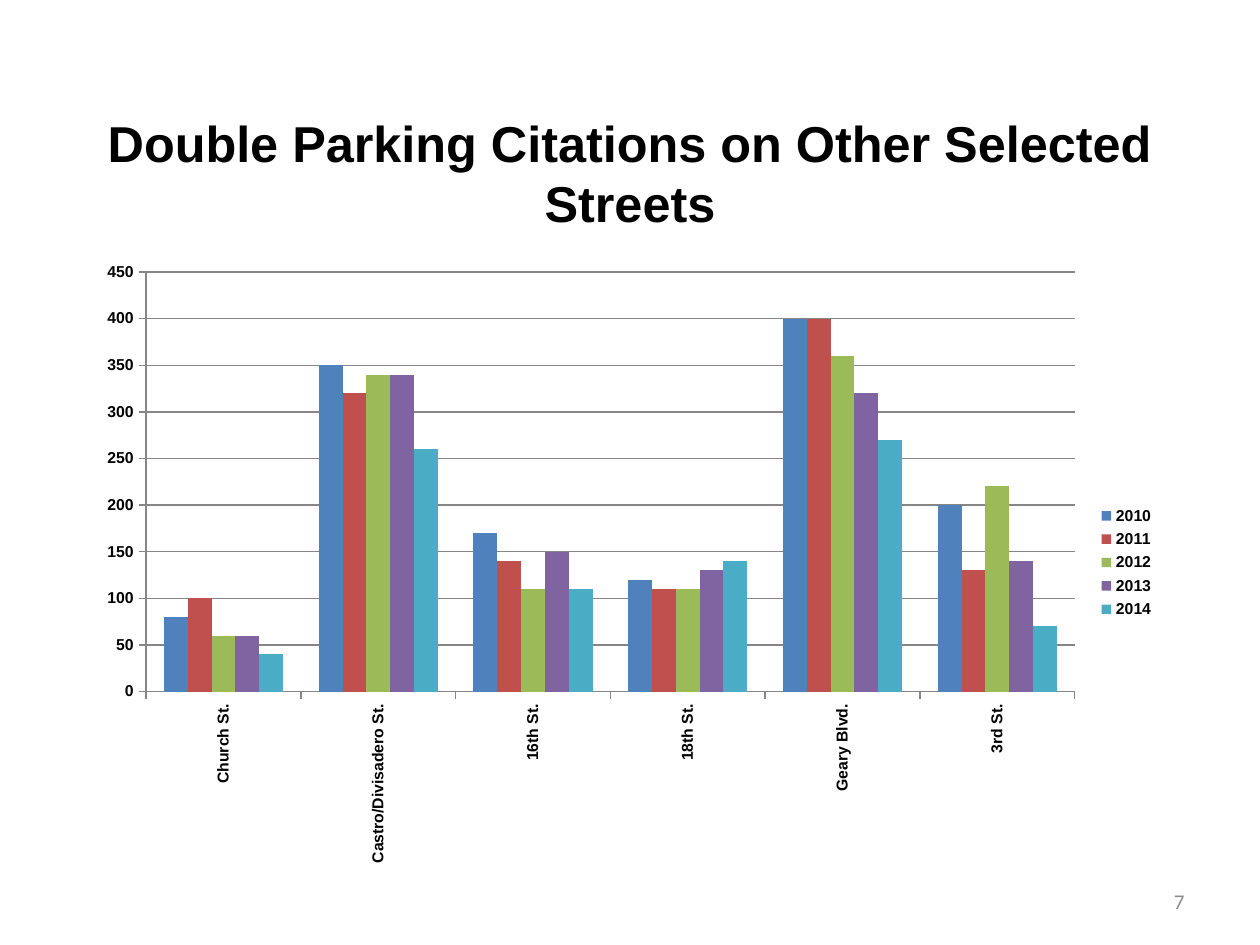
from typing import NamedTuple

from lxml import etree
from pptx import Presentation
from pptx.chart.data import CategoryChartData
from pptx.dml.color import RGBColor
from pptx.enum.chart import XL_CHART_TYPE, XL_LEGEND_POSITION, XL_TICK_MARK
from pptx.enum.text import MSO_ANCHOR, MSO_AUTO_SIZE, PP_ALIGN
from pptx.oxml.ns import qn
from pptx.util import Inches, Pt

CLUSTERED = XL_CHART_TYPE.COLUMN_CLUSTERED
LEGEND_RIGHT = XL_LEGEND_POSITION.RIGHT
OUTSIDE = XL_TICK_MARK.OUTSIDE
MIDDLE = MSO_ANCHOR.MIDDLE
NO_AUTOFIT = MSO_AUTO_SIZE.NONE
CENTER, RIGHT = PP_ALIGN.CENTER, PP_ALIGN.RIGHT
TITLE_ONLY = 5

COLORS = {
    "text": "000000",
    "page_number": "8C8C8C",
    "axis": "868686",
    "2010": "4F81BD",
    "2011": "C0504D",
    "2012": "9BBB59",
    "2013": "8064A2",
    "2014": "4BACC6",
}


class Box(NamedTuple):
    left: float
    top: float
    width: float
    height: float


class YearCitations(NamedTuple):
    year: str
    counts: tuple


TITLE_BOX = Box(0.5, 0.93, 9, 0.88)
NUMBER_BOX = Box(7.17, 6.95, 2.33, 0.4)
CHART_BOX = Box(0.68, 1.98, 8.58, 4.97)
PLOT_BOX = Box(1.16, 2.16, 7.37, 3.33)

STREETS = ("Church St.", "Castro/Divisadero St.", "16th St.", "18th St.",
           "Geary Blvd.", "3rd St.")
CITATIONS = (
    YearCitations("2010", (80, 350, 170, 120, 400, 200)),
    YearCitations("2011", (100, 320, 140, 110, 400, 130)),
    YearCitations("2012", (60, 340, 110, 110, 360, 220)),
    YearCitations("2013", (60, 340, 150, 130, 320, 140)),
    YearCitations("2014", (40, 260, 110, 140, 270, 70)),
)


def color(name: str) -> RGBColor:
    return RGBColor.from_string(COLORS[name])


def lengths(box: Box) -> list:
    return [Inches(value) for value in box]


def style_font(font, name: str, size: float, color_name: str, bold: bool) -> None:
    font.name = name
    font.size = Pt(size)
    font.bold = bold
    font.color.rgb = color(color_name)


def style_line(line) -> None:
    line.color.rgb = color("axis")
    line.width = Pt(0.75)


def write_line(shape, text: str, alignment, name: str, size: float,
               color_name: str, bold: bool) -> None:
    frame = shape.text_frame
    frame.text = text
    frame.word_wrap = True
    frame.auto_size = NO_AUTOFIT
    frame.vertical_anchor = MIDDLE
    paragraph = frame.paragraphs[0]
    paragraph.alignment = alignment
    style_font(paragraph.runs[0].font, name, size, color_name, bold)


def add_title(slide) -> None:
    title = slide.shapes.title
    title.left, title.top, title.width, title.height = lengths(TITLE_BOX)
    write_line(title, "Double Parking Citations on Other Selected Streets",
               CENTER, "Arial", 28.8, "text", True)


def place_plot(chart) -> None:
    plot_area = chart._chartSpace.find(".//" + qn("c:plotArea"))
    layout = plot_area.find(qn("c:layout"))
    if layout is None:
        layout = etree.Element(qn("c:layout"))
        plot_area.insert(0, layout)
    manual = etree.SubElement(layout, qn("c:manualLayout"))
    settings = {
        "layoutTarget": "inner",
        "xMode": "edge",
        "yMode": "edge",
        "x": (PLOT_BOX.left - CHART_BOX.left) / CHART_BOX.width,
        "y": (PLOT_BOX.top - CHART_BOX.top) / CHART_BOX.height,
        "w": PLOT_BOX.width / CHART_BOX.width,
        "h": PLOT_BOX.height / CHART_BOX.height,
    }
    for tag, value in settings.items():
        etree.SubElement(manual, qn(f"c:{tag}")).set("val", str(value))


def add_citation_chart(slide) -> None:
    data = CategoryChartData()
    data.categories = STREETS
    for citations in CITATIONS:
        data.add_series(citations.year, citations.counts)
    chart = slide.shapes.add_chart(CLUSTERED, *lengths(CHART_BOX), data).chart
    chart.has_title = False
    style_font(chart.font, "Calibri", 10, "text", False)

    plot = chart.plots[0]
    plot.gap_width = 150
    plot.overlap = 0
    plot.vary_by_categories = False
    for series in plot.series:
        series.format.fill.solid()
        series.format.fill.fore_color.rgb = color(series.name)

    for axis in (chart.category_axis, chart.value_axis):
        axis.major_tick_mark = OUTSIDE
        style_font(axis.tick_labels.font, "Arial", 9, "text", True)
        style_line(axis.format.line)
    labels = chart._chartSpace.find(".//" + qn("c:catAx") + "/" + qn("c:txPr"))
    body = labels.find(qn("a:bodyPr"))
    body.set("rot", "-5400000")
    body.set("vert", "horz")

    values = chart.value_axis
    values.minimum_scale, values.maximum_scale, values.major_unit = 0, 450, 50
    values.has_major_gridlines = True
    style_line(values.major_gridlines.format.line)

    chart.has_legend = True
    chart.legend.position = LEGEND_RIGHT
    chart.legend.include_in_layout = False
    style_font(chart.legend.font, "Arial", 9, "text", True)
    place_plot(chart)


def main() -> None:
    presentation = Presentation()
    presentation.slide_width = Inches(10)
    presentation.slide_height = Inches(7.5)
    slide = presentation.slides.add_slide(presentation.slide_layouts[TITLE_ONLY])
    add_title(slide)
    number = slide.shapes.add_textbox(*lengths(NUMBER_BOX))
    write_line(number, "7", RIGHT, "Calibri", 12, "page_number", False)
    add_citation_chart(slide)
    presentation.save("out.pptx")


if __name__ == "__main__":
    main()
